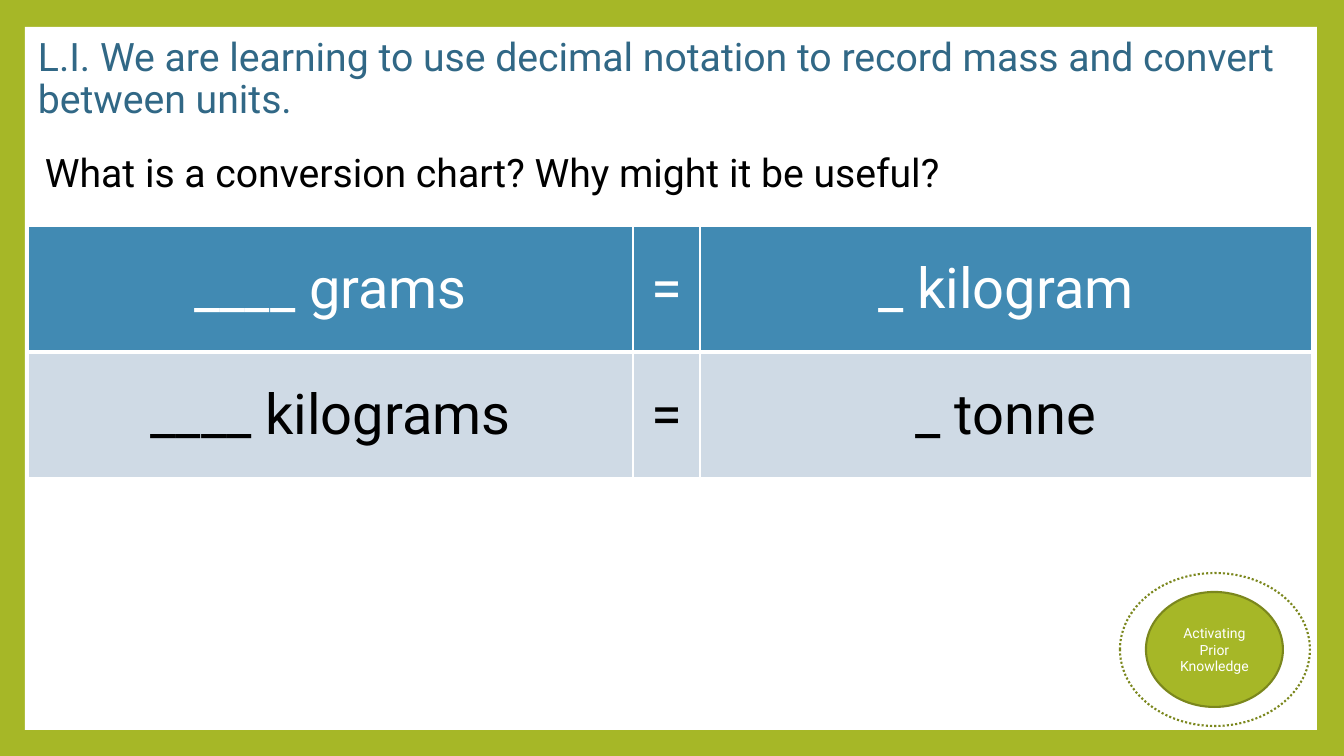
from pptx import Presentation
from pptx import util as u
from pptx.dml.color import RGBColor
from pptx.enum import dml, shapes, text
from pptx.oxml import parse_xml
from pptx.oxml.ns import nsdecls

FONT = "Roboto"
HUES = {
    "lime": "A6B727",
    "olive": "7B871D",
    "white": "FFFFFF",
    "black": "000000",
    "navy": "316886",
    "blue": "418AB3",
    "pale": "CFDAE5",
}
ROWS = [
    ("____ grams", "=", "_ kilogram"),
    ("____ kilograms", "=", "_ tonne"),
]
COLS = (605, 67, 612)


def px(n):
    return u.Emu(round(n * 914400 / 100.8))


def hue(name):
    return RGBColor.from_string(HUES[name])


def paint(fill, name):
    fill.solid()
    fill.fore_color.rgb = hue(name)


def write(frame, words, size, color, align=text.PP_ALIGN.LEFT):
    frame.text = words
    frame.word_wrap = True
    para = frame.paragraphs[0]
    para.alignment = align
    font = para.runs[0].font
    font.name, font.size, font.color.rgb = FONT, u.Pt(size), hue(color)
    return para


def add_shape(parent, kind, box):
    shape = parent.shapes.add_shape(kind, *map(px, box))
    shape.shadow.inherit = False
    return shape


def add_frame(slide, box):
    # Lime border around a white panel
    paint(slide.background.fill, "lime")
    panel = add_shape(slide, shapes.MSO_SHAPE.RECTANGLE, box)
    paint(panel.fill, "white")
    panel.line.fill.background()


def add_title(slide, box):
    frame = slide.shapes.add_textbox(*map(px, box)).text_frame
    frame.vertical_anchor = text.MSO_ANCHOR.MIDDLE
    para = write(frame, "L.I. We are learning to use decimal notation to "
                 "record mass and convert between units.", 28, "navy")
    para.line_spacing = 0.9


def add_prompt(slide, box):
    frame = slide.shapes.add_textbox(*map(px, box)).text_frame
    write(frame, "What is a conversion chart? Why might it be useful?",
          28, "black")


def edge(cell, side, width):
    cell._tc.get_or_add_tcPr().append(parse_xml(
        f'<a:ln{side} {nsdecls("a")} w="{u.Pt(width)}"><a:solidFill>'
        f'<a:srgbClr val="{HUES["white"]}"/></a:solidFill></a:ln{side}>'))


def add_chart(slide, box):
    # Conversion table: a blue heading row over a pale row
    table = slide.shapes.add_table(len(ROWS), len(COLS),
                                   *map(px, box)).table
    for col, wide in zip(table.columns, COLS):
        col.width = px(wide)
    looks = (("blue", "white"), ("pale", "black"))
    for r, (row, (back, ink)) in enumerate(zip(ROWS, looks)):
        table.rows[r].height = px(box[3] // len(ROWS))
        for c, words in enumerate(row):
            cell = table.cell(r, c)
            for side in "LRTB":
                inner = (r, side) in ((0, "B"), (1, "T"))
                edge(cell, side, 3 if inner else 1)
            paint(cell.fill, back)
            cell.vertical_anchor = text.MSO_ANCHOR.MIDDLE
            write(cell.text_frame, words, 40, ink, text.PP_ALIGN.CENTER)


def add_badge(slide, box):
    # Filled oval inside a dotted ring
    x, y, w, h = box
    group = slide.shapes.add_group_shape()
    oval = shapes.MSO_SHAPE.OVAL
    disc = add_shape(group, oval, (x + 26, y + 19, w - 53, h - 38))
    ring = add_shape(group, oval, box)
    paint(disc.fill, "lime")
    ring.fill.background()
    for shape in (disc, ring):
        shape.line.color.rgb = hue("olive")
        shape.line.width = u.Pt(1.5)
    ring.line.dash_style = dml.MSO_LINE.ROUND_DOT
    disc.text_frame.vertical_anchor = text.MSO_ANCHOR.MIDDLE
    write(disc.text_frame, "Activating Prior Knowledge", 10, "white",
          text.PP_ALIGN.CENTER)


def main():
    deck = Presentation()
    deck.slide_width, deck.slide_height = px(1344), px(756)
    slide = deck.slides.add_slide(deck.slide_layouts[6])
    add_frame(slide, (25, 27, 1292, 703))
    add_title(slide, (28, 32, 1284, 96))
    add_chart(slide, (28, 226, sum(COLS), 252))
    add_badge(slide, (1120, 573, 190, 153))
    add_prompt(slide, (35, 143, 1275, 57))
    deck.save("out.pptx")


if __name__ == "__main__":
    main()
